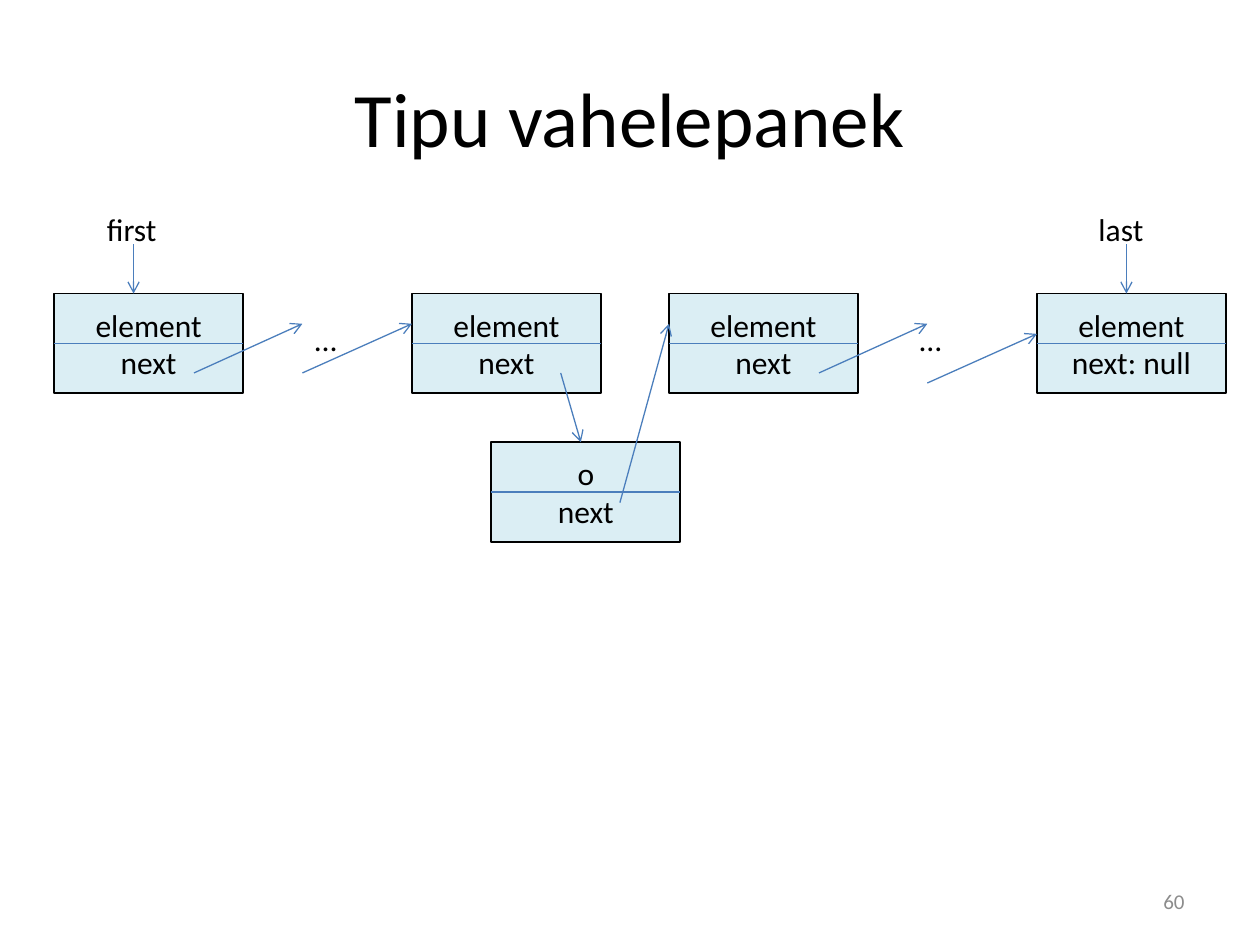
from pptx import Presentation
from pptx import util as u
from pptx.dml.color import RGBColor
from pptx.enum import shapes, text
from pptx.oxml.ns import qn
from lxml import etree

COLORS = {"text": "000000", "number": "8C8C8C", "node": "DBEEF4",
          "border": "000000", "link": "4B7EBC"}
NODE_W, NODE_H = 1.5, 0.79
ROW_Y, NEW_Y = 2.33, 3.51

prs = Presentation()
prs.slide_width, prs.slide_height = u.Inches(10), u.Inches(7.5)
s = prs.slides.add_slide(prs.slide_layouts[5])


def set_text(sp, lines, size=18, color="text", align=text.PP_ALIGN.CENTER):
    tf = sp.text_frame
    tf.text = "\n".join(lines)
    for p in tf.paragraphs:
        p.alignment = align
        p.font.name = "Calibri"
        p.font.size = u.Pt(size)
        p.font.color.rgb = RGBColor.from_string(COLORS[color])
    return tf


def add_line(x1, y1, x2, y2, arrow=False):
    line = s.shapes.add_connector(shapes.MSO_CONNECTOR.STRAIGHT, u.Inches(x1),
                                  u.Inches(y1), u.Inches(x2), u.Inches(y2))
    line.line.color.rgb = RGBColor.from_string(COLORS["link"])
    line.line.width = u.Pt(0.75)
    if arrow:
        etree.SubElement(line.line._get_or_add_ln(), qn("a:tailEnd"), type="arrow")
    etree.SubElement(line._element.spPr, qn("a:effectLst"))
    return line


title = s.shapes.title
title.left, title.top = u.Inches(0.5), u.Inches(0.3)
title.width, title.height = u.Inches(9), u.Inches(1.25)
tf = set_text(title, ["Tipu vahelepanek"], size=44)
tf.vertical_anchor = text.MSO_ANCHOR.MIDDLE

number = s.shapes.add_textbox(u.Inches(7.17), u.Inches(6.95), u.Inches(2.33), u.Inches(0.4))
tf = set_text(number, ["60"], 12, "number", text.PP_ALIGN.RIGHT)
tf.word_wrap = True
tf.vertical_anchor = text.MSO_ANCHOR.MIDDLE

nodes = [
    (0.43, ROW_Y, "element", "next"),
    (3.27, ROW_Y, "element", "next"),
    (5.31, ROW_Y, "element", "next"),
    (3.9, NEW_Y, "o", "next"),
    (8.23, ROW_Y, "element", "next: null"),
]
for x, y, element, link in nodes:
    sp = s.shapes.add_shape(shapes.MSO_SHAPE.RECTANGLE, u.Inches(x), u.Inches(y),
                            u.Inches(NODE_W), u.Inches(NODE_H))
    sp.shadow.inherit = False
    sp.fill.solid()
    sp.fill.fore_color.rgb = RGBColor.from_string(COLORS["node"])
    sp.line.color.rgb = RGBColor.from_string(COLORS["border"])
    sp.line.width = u.Pt(1)
    tf = set_text(sp, [element, link])
    tf.vertical_anchor = text.MSO_ANCHOR.MIDDLE
    middle = y + NODE_H / 2
    divider = add_line(x, middle, x + NODE_W, middle)
    divider.begin_connect(sp, 1)
    divider.end_connect(sp, 3)

labels = [("…", 2.4, 2.49, 0.38), ("…", 7.2, 2.49, 0.38),
          ("first", 0.75, 1.62, 0.6), ("last", 8.62, 1.62, 0.56)]
for label, x, y, w in labels:
    box = s.shapes.add_textbox(u.Inches(x), u.Inches(y), u.Inches(w), u.Inches(0.4))
    tf = set_text(box, [label], align=text.PP_ALIGN.LEFT)
    tf.word_wrap = False
    tf.auto_size = text.MSO_AUTO_SIZE.SHAPE_TO_FIT_TEXT

arrows = [
    (4.45, 2.96, 4.61, NEW_Y),
    (6.5, 2.96, 7.36, 2.57),
    (1.54, 2.96, 2.4, 2.57),
    (2.4, 2.96, 3.27, 2.57),
    (7.36, 3.04, 8.23, 2.65),
    (1.06, 1.94, 1.06, ROW_Y),
    (8.94, 1.94, 8.94, ROW_Y),
    (4.92, 3.99, 5.31, 2.57),
]
for ends in arrows:
    add_line(*ends, arrow=True)

prs.save("out.pptx")
